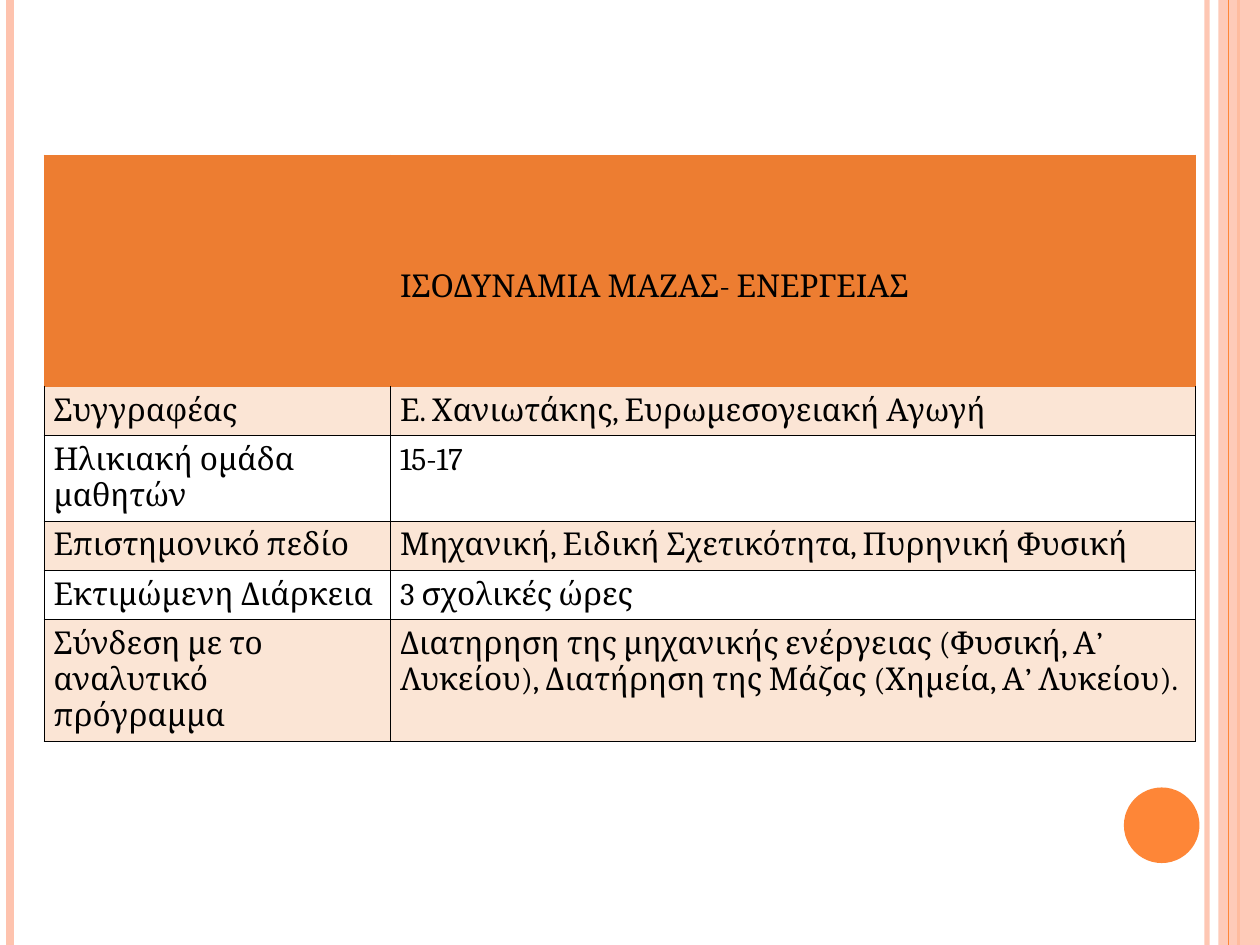
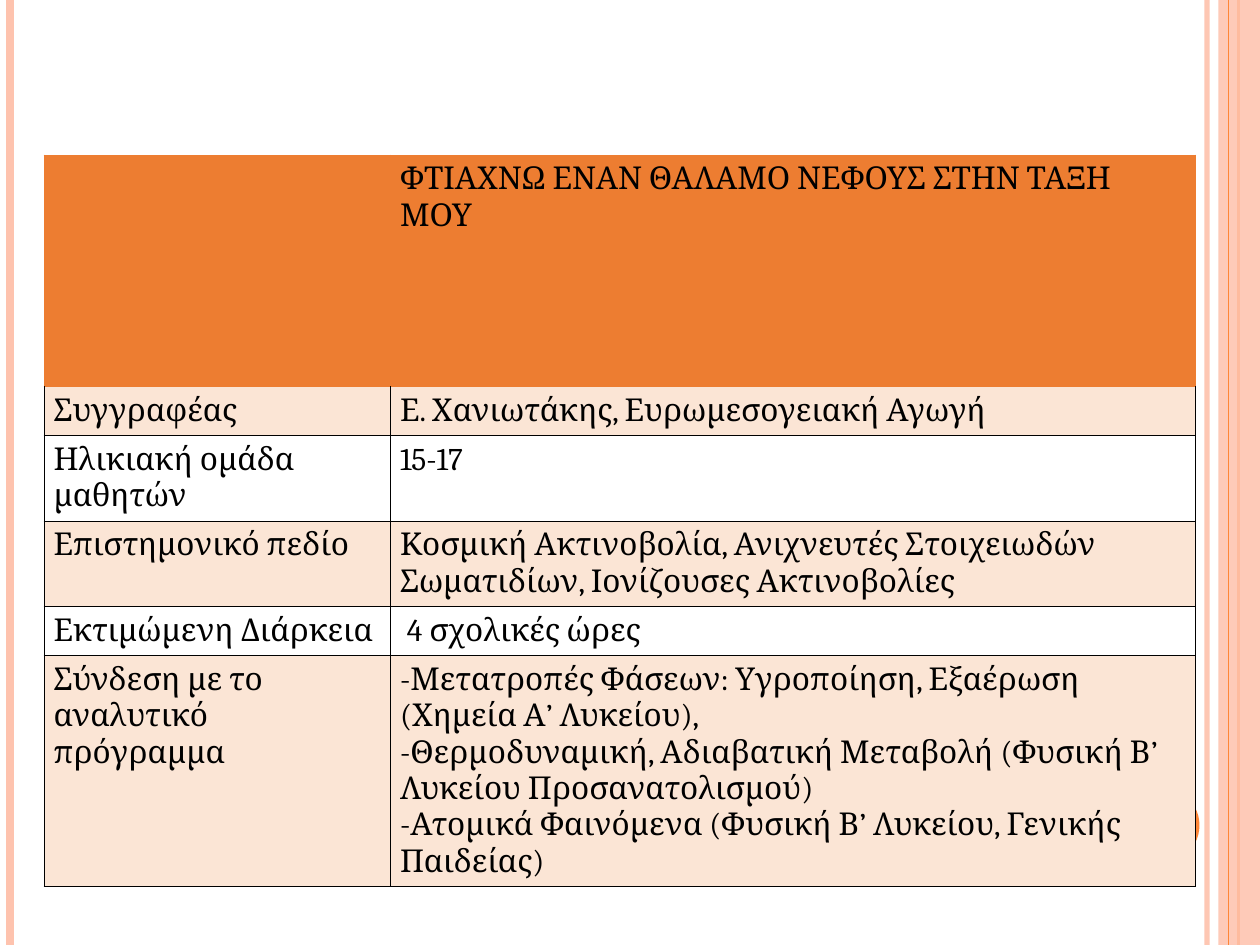
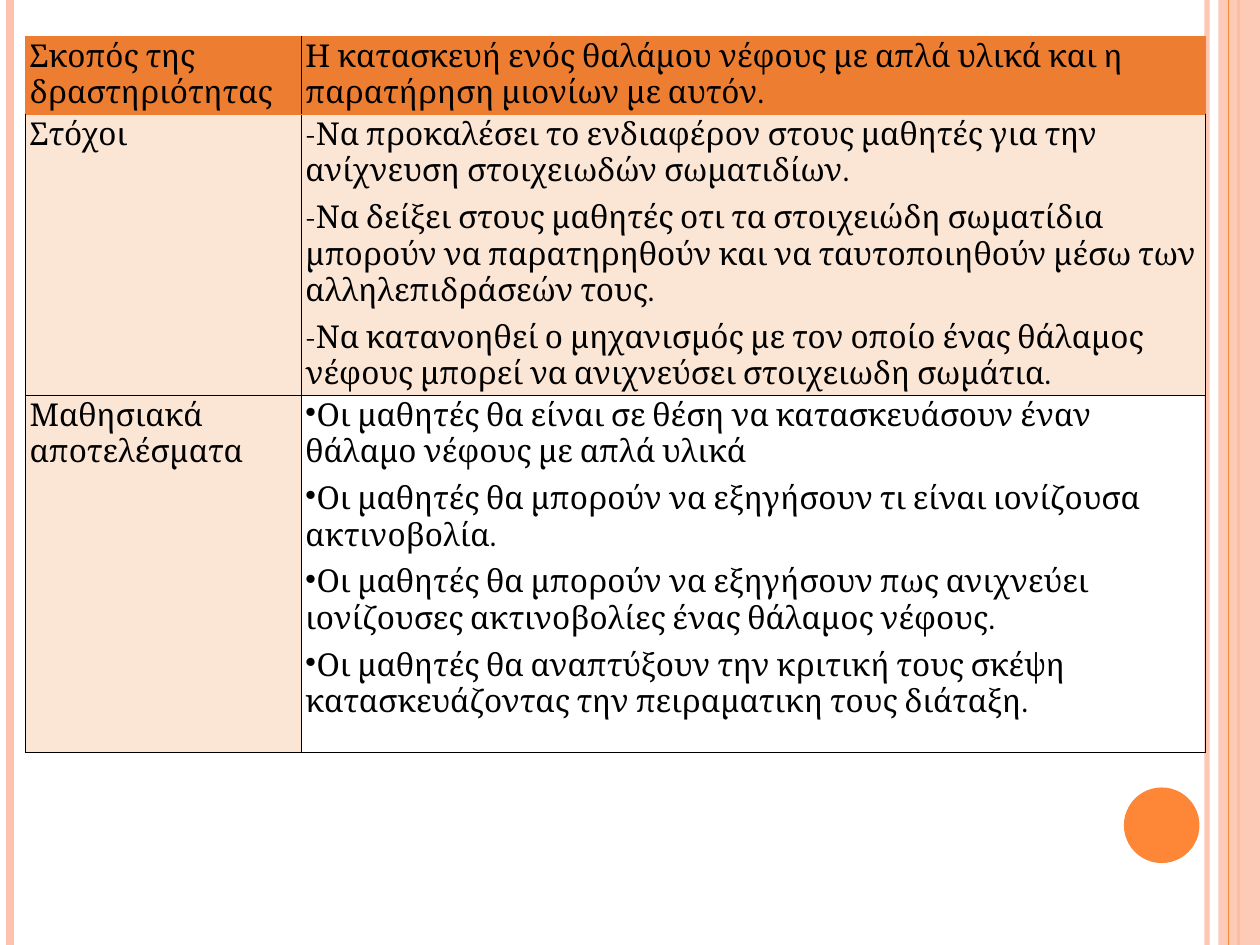
import pptx
import pptx.dml.color
import pptx.enum.shapes
import pptx.oxml
import pptx.oxml.ns
import pptx.util
from lxml import etree

RGBColor = pptx.dml.color.RGBColor
PEACH = RGBColor(0xFE, 0xC3, 0xAE)
BRIGHT_ORANGE = RGBColor(0xFE, 0x86, 0x37)
HEADER_ORANGE = RGBColor(0xED, 0x7D, 0x31)
PALE_ORANGE = RGBColor(0xFB, 0xE5, 0xD5)
BLACK = RGBColor(0, 0, 0)

# The slide is a grid of 100 columns by 75 rows
COLUMNS, ROWS = 100, 75
CELL_FONT = {"name": "Cambria", "size": pptx.util.Pt(18)}
BORDER_WIDTH = pptx.util.Pt(0.5)
PARAGRAPH_GAP = pptx.util.Pt(6)

LABELS = ["Συγγραφέας", "Ηλικιακή ομάδα μαθητών", "Επιστημονικό πεδίο",
          "Εκτιμώμενη Διάρκεια", "Σύνδεση με το αναλυτικό πρόγραμμα"]
AUTHOR = "Ε. Χανιωτάκης, Ευρωμεσογειακή Αγωγή"
AGES = "15-17"

MASS_ENERGY = {
    "title": "ΙΣΟΔΥΝΑΜΙΑ ΜΑΖΑΣ- ΕΝΕΡΓΕΙΑΣ",
    "title_top": 9.1,
    "details": [AUTHOR, AGES, "Μηχανική, Ειδική Σχετικότητα, Πυρηνική Φυσική",
                "3 σχολικές ώρες",
                "Διατηρηση της μηχανικής ενέργειας (Φυσική, Α’ Λυκείου), "
                "Διατήρηση της Μάζας (Χημεία, Α’ Λυκείου)."],
    "heights": [18.4, 3.9, 6.7, 3.9, 3.9, 9.7],
}
CLOUD_CHAMBER = {
    "title": "ΦΤΙΑΧΝΩ ΕΝΑΝ ΘΑΛΑΜΟ ΝΕΦΟΥΣ ΣΤΗΝ ΤΑΞΗ ΜΟΥ",
    "title_top": 0.5,
    "details": [AUTHOR, AGES,
                "Κοσμική Ακτινοβολία, Ανιχνευτές Στοιχειωδών Σωματιδίων, "
                "Ιονίζουσες Ακτινοβολίες",
                " 4 σχολικές ώρες",
                "-Μετατροπές Φάσεων: Υγροποίηση, Εξαέρωση (Χημεία Α’ Λυκείου),\v"
                "-Θερμοδυναμική, Αδιαβατική Μεταβολή (Φυσική Β’ Λυκείου Προσανατολισμού)\v"
                "-Ατομικά Φαινόμενα (Φυσική Β’ Λυκείου, Γενικής Παιδείας)"],
    "heights": [18.4, 3.9, 6.7, 6.7, 3.9, 18.3],
}
AIMS = [
    ["Σκοπός της δραστηριότητας",
     "Η κατασκευή ενός θαλάμου νέφους με απλά υλικά και η παρατήρηση μιονίων με αυτόν."],
    ["Στόχοι",
     "-Να προκαλέσει το ενδιαφέρον στους μαθητές για την ανίχνευση στοιχειωδών σωματιδίων.\n"
     "-Να δείξει στους μαθητές οτι τα στοιχειώδη σωματίδια μπορούν να παρατηρηθούν "
     "και να ταυτοποιηθούν μέσω των αλληλεπιδράσεών τους.\n"
     "-Να κατανοηθεί ο μηχανισμός με τον οποίο ένας θάλαμος νέφους μπορεί να "
     "ανιχνεύσει στοιχειωδη σωμάτια."],
    ["Μαθησιακά αποτελέσματα",
     "Οι μαθητές θα είναι σε θέση να κατασκευάσουν έναν θάλαμο νέφους με απλά υλικά\n"
     "Οι μαθητές θα μπορούν να εξηγήσουν τι είναι ιονίζουσα ακτινοβολία.\n"
     "Οι μαθητές θα μπορούν να εξηγήσουν πως ανιχνεύει ιονίζουσες ακτινοβολίες "
     "ένας θάλαμος νέφους.\n"
     "Οι μαθητές θα αναπτύξουν την κριτική τους σκέψη κατασκευάζοντας την "
     "πειραματικη τους διάταξη."],
]


def grid(units):
    return pptx.util.Inches(units / 10)


def add_xml(parent, tag, **attributes):
    return etree.SubElement(parent, pptx.oxml.ns.qn(tag), attributes)


def set_opacity(shape, percent):
    for color in shape.element.spPr.iter(pptx.oxml.ns.qn("a:srgbClr")):
        add_xml(color, "a:alpha", val=str(percent * 1000))


# Side stripes and page dot
def add_stripe(shapes, column, color, width):
    stripe = shapes.add_connector(pptx.enum.shapes.MSO_CONNECTOR.STRAIGHT,
                                  grid(column), 0, grid(column), grid(ROWS))
    stripe.line.color.rgb = color
    stripe.line.width = pptx.util.Pt(width)
    add_xml(stripe.element.spPr, "a:effectLst")
    return stripe


def add_plain_shape(shapes, kind, box, color):
    plain = shapes.add_shape(kind, *map(grid, box))
    plain.shadow.inherit = False
    plain.fill.solid()
    plain.fill.fore_color.rgb = color
    plain.line.fill.background()
    return plain


def decorate_master(prs, slide):
    """Draw the decoration on a slide, then hand it to the master."""
    shapes = slide.shapes
    kinds = pptx.enum.shapes.MSO_SHAPE
    inner = add_stripe(shapes, 95.8, PEACH, 3)
    set_opacity(inner, 93)
    left = add_stripe(shapes, 0.8, PEACH, 4.5)
    outer = add_stripe(shapes, 98.3, BRIGHT_ORANGE, 1.5)
    band = add_plain_shape(shapes, kinds.RECTANGLE, (96.7, 0, 3.3, ROWS), PEACH)
    set_opacity(band, 87)
    thin = add_stripe(shapes, 97.5, BRIGHT_ORANGE, 0.75)
    dot = add_plain_shape(shapes, kinds.OVAL, (89.2, 62.5, 6, 6), BRIGHT_ORANGE)
    for part in (inner, left, outer, band, thin, dot):
        prs.slide_master.shapes.element.append(part.element)


# Tables
def set_borders(cell, colors):
    properties = cell._tc.get_or_add_tcPr()
    for side, color in zip("LRTB", colors):
        edge = add_xml(properties, f"a:ln{side}", w=str(BORDER_WIDTH))
        add_xml(add_xml(edge, "a:solidFill"), "a:srgbClr", val=str(color))


def format_cell(cell, text, fill, borders, margins):
    set_borders(cell, borders)
    if fill is None:
        cell.fill.background()
    else:
        cell.fill.solid()
        cell.fill.fore_color.rgb = fill
    for margin, size in margins.items():
        setattr(cell, margin, grid(size))
    cell.text_frame.text = text
    for paragraph in cell.text_frame.paragraphs:
        for attribute, value in CELL_FONT.items():
            setattr(paragraph.font, attribute, value)
        for run in paragraph.runs:
            for attribute, value in CELL_FONT.items():
                setattr(run.font, attribute, value)
            run.font.color.rgb = BLACK


def add_header_table(slide, origin, widths, heights, texts, fills, divider, inset):
    """Table with an orange-edged header row and black rules below it."""
    box = (*origin, sum(widths), sum(heights))
    table = slide.shapes.add_table(len(texts), len(widths), *map(grid, box)).table
    table.first_row = table.horz_banding = False
    for column, width in zip(table.columns, widths):
        column.width = grid(width)
    for row, height in zip(table.rows, heights):
        row.height = grid(height)
    side, end = inset
    margins = {"margin_left": side, "margin_right": side,
               "margin_top": end, "margin_bottom": end}
    for r, row_texts in enumerate(texts):
        for c, text in enumerate(row_texts):
            if r == 0:
                borders = [HEADER_ORANGE] * 4
                borders[1 - c] = divider
            else:
                borders = [BLACK, BLACK, HEADER_ORANGE if r == 1 else BLACK, BLACK]
            format_cell(table.cell(r, c), text, fills[r][c], borders, margins)
    return table


def fill_lesson_slide(slide, lesson):
    texts = [["", lesson["title"]], *zip(LABELS, lesson["details"])]
    bands = [HEADER_ORANGE] + [PALE_ORANGE if i % 2 == 0 else None
                               for i in range(len(LABELS))]
    table = add_header_table(slide, (3.5, 12.3), (27.5, 63.9), lesson["heights"],
                             texts, [[band] * 2 for band in bands],
                             HEADER_ORANGE, (0.75, 0.5))
    table.cell(0, 1).margin_top = grid(lesson["title_top"])


def fill_aims_slide(slide):
    fills = [[HEADER_ORANGE] * 2, [PALE_ORANGE] * 2, [PALE_ORANGE, None]]
    table = add_header_table(slide, (2, 2.9), (21.9, 71.8), (6.2, 22.3, 28.3),
                             AIMS, fills, BLACK, (0.35, 0.2))
    goals, results = (table.cell(r, 1).text_frame.paragraphs for r in (1, 2))
    for goal in goals:
        goal.space_after = PARAGRAPH_GAP
    for result in results:
        result.space_before = PARAGRAPH_GAP
        properties = result._p.get_or_add_pPr()
        bullet = properties.makeelement(pptx.oxml.ns.qn("a:buChar"), {"char": "•"})
        properties.find(pptx.oxml.ns.qn("a:spcBef")).addnext(bullet)


def main():
    prs = pptx.Presentation()
    prs.slide_width, prs.slide_height = grid(COLUMNS), grid(ROWS)
    blank = prs.slide_layouts[6]
    mass_energy, cloud_chamber, aims = (prs.slides.add_slide(blank) for _ in range(3))
    decorate_master(prs, mass_energy)
    fill_lesson_slide(mass_energy, MASS_ENERGY)
    fill_lesson_slide(cloud_chamber, CLOUD_CHAMBER)
    fill_aims_slide(aims)
    prs.save("out.pptx")


if __name__ == "__main__":
    main()
